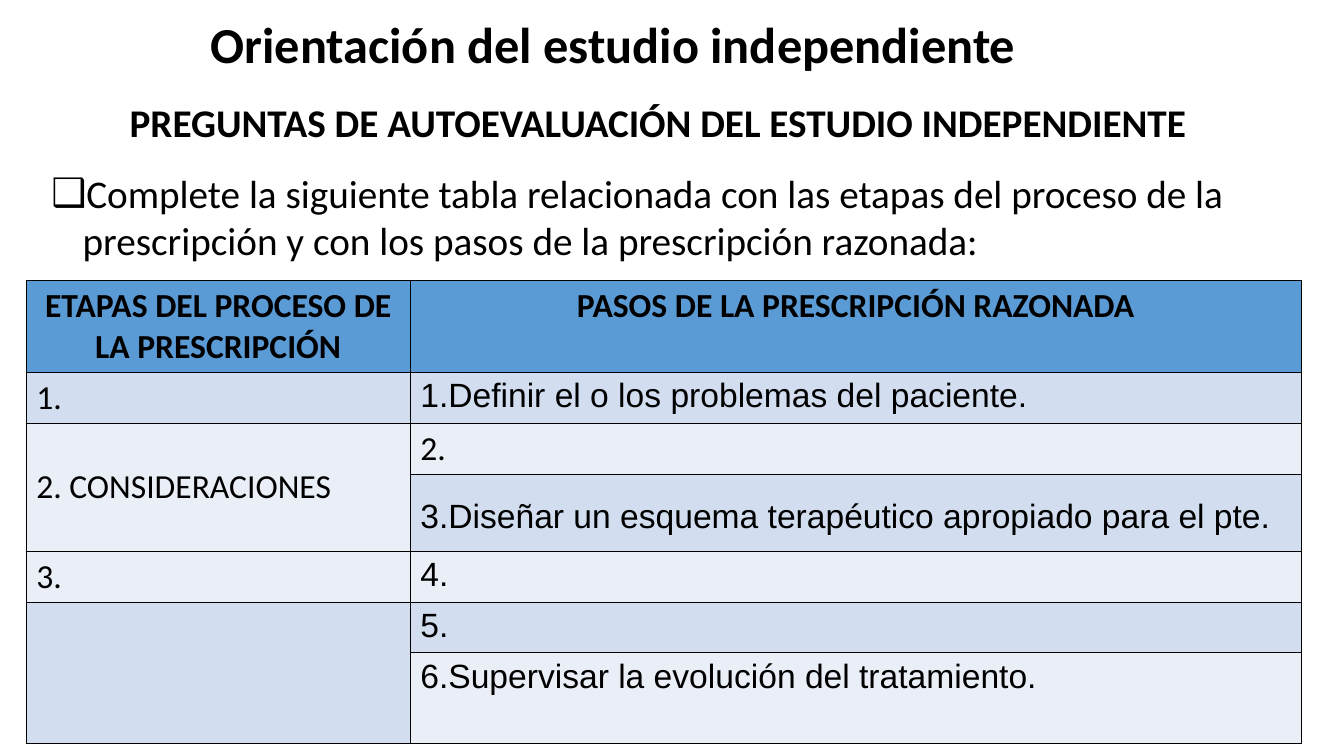
import dataclasses

import lxml.etree
import pptx
import pptx.dml.color
import pptx.enum.text
import pptx.oxml.ns
import pptx.util


@dataclasses.dataclass(frozen=True)
class Theme:
    text: str = "000000"
    header: str = "5B9BD5"
    dark_band: str = "D2DEEF"
    light_band: str = "EAEFF7"
    heading_font: str = "Calibri"
    table_font: str = "Arial"
    title_size: int = 36
    body_size: int = 28
    table_size: int = 24


theme = Theme()
Cm = pptx.util.Cm
Align = pptx.enum.text.PP_ALIGN
Anchor = pptx.enum.text.MSO_ANCHOR
qn = pptx.oxml.ns.qn


def write(frame, text, size, font=theme.heading_font, bold=False, align=Align.LEFT, spacing=1.0):
    frame.word_wrap = True
    paragraph = frame.paragraphs[0]
    paragraph.alignment = align
    paragraph.line_spacing = spacing
    paragraph.space_before = pptx.util.Pt(0)
    run = paragraph.add_run()
    run.text = text
    run.font.name = font
    run.font.size = pptx.util.Pt(size)
    run.font.bold = bold
    run.font.color.rgb = pptx.dml.color.RGBColor.from_string(theme.text)
    return paragraph


def place(shape, left, top, width, height):
    shape.left, shape.top, shape.width, shape.height = Cm(left), Cm(top), Cm(width), Cm(height)
    shape.text_frame.auto_size = pptx.enum.text.MSO_AUTO_SIZE.NONE
    shape.text_frame.vertical_anchor = Anchor.TOP


presentation = pptx.Presentation()
presentation.slide_width = Cm(33.87)
presentation.slide_height = Cm(19.05)
slide = presentation.slides.add_slide(presentation.slide_layouts[1])

title = slide.shapes.title
place(title, 5.05, 0.2, 28.8, 1.8)
write(title.text_frame, "Orientación del estudio independiente", theme.title_size, bold=True)

subtitle = slide.shapes.add_textbox(0, 0, 0, 0)
place(subtitle, 3.02, 2.36, 27.8, 1.45)
write(subtitle.text_frame, "PREGUNTAS DE AUTOEVALUACIÓN DEL ESTUDIO INDEPENDIENTE", theme.body_size, bold=True)

task = slide.placeholders[1]
place(task, 1.04, 4.14, 31.17, 2.64)
paragraph = write(
    task.text_frame,
    "Complete la siguiente tabla relacionada con las etapas del proceso de la "
    "prescripción y con los pasos de la prescripción razonada:",
    theme.body_size,
)
properties = paragraph._p.get_or_add_pPr()
properties.set("marL", str(Cm(0.79)))
properties.set("indent", str(-Cm(0.79)))
lxml.etree.SubElement(properties, qn("a:buFont"), typeface=theme.table_font)
lxml.etree.SubElement(properties, qn("a:buChar"), char="❑")

column_widths = [9.68, 22.45]
row_heights = [2.29, 1.27, 1.27, 1.93, 1.27, 1.27, 2.29]
frame = slide.shapes.add_table(
    len(row_heights), len(column_widths), Cm(0.66), Cm(7.06), Cm(sum(column_widths)), Cm(sum(row_heights))
)
table = frame.table
table.first_row = table.horz_banding = False
for column, width in zip(table.columns, column_widths):
    column.width = Cm(width)
for row, height in zip(table.rows, row_heights):
    row.height = Cm(height)

heading = {"bold": True, "align": Align.CENTER}
arial = {"font": theme.table_font}
contents = [
    [("ETAPAS DEL PROCESO DE LA PRESCRIPCIÓN", heading), ("PASOS DE LA PRESCRIPCIÓN RAZONADA", heading)],
    [("1.", {}), ("1.Definir el o los problemas del paciente.", arial)],
    [("2. CONSIDERACIONES", {}), ("2.", {})],
    [None, ("3.Diseñar un esquema terapéutico apropiado para el pte.", {**arial, "spacing": 1.5})],
    [("3.", {}), ("4.", arial)],
    [None, ("5.", arial)],
    [None, ("6.Supervisar la evolución del tratamiento.", arial)],
]
for row_index, row in enumerate(contents):
    band = theme.dark_band if row_index % 2 else theme.light_band
    for column_index, content in enumerate(row):
        cell = table.cell(row_index, column_index)
        cell.fill.solid()
        cell.fill.fore_color.rgb = pptx.dml.color.RGBColor.from_string(band if row_index else theme.header)
        if content:
            text, style = content
            write(cell.text_frame, text, theme.table_size, **style)
        cell_properties = cell._tc.get_or_add_tcPr()
        for position, side in enumerate(["a:lnL", "a:lnR", "a:lnT", "a:lnB"]):
            line = lxml.etree.Element(qn(side), w=str(pptx.util.Pt(1)))
            fill = lxml.etree.SubElement(line, qn("a:solidFill"))
            lxml.etree.SubElement(fill, qn("a:srgbClr"), val=theme.text)
            cell_properties.insert(position, line)

for first_row in (2, 5):
    table.cell(first_row, 0).merge(table.cell(first_row + 1, 0))
table.cell(2, 0).vertical_anchor = Anchor.MIDDLE

presentation.save("out.pptx")
